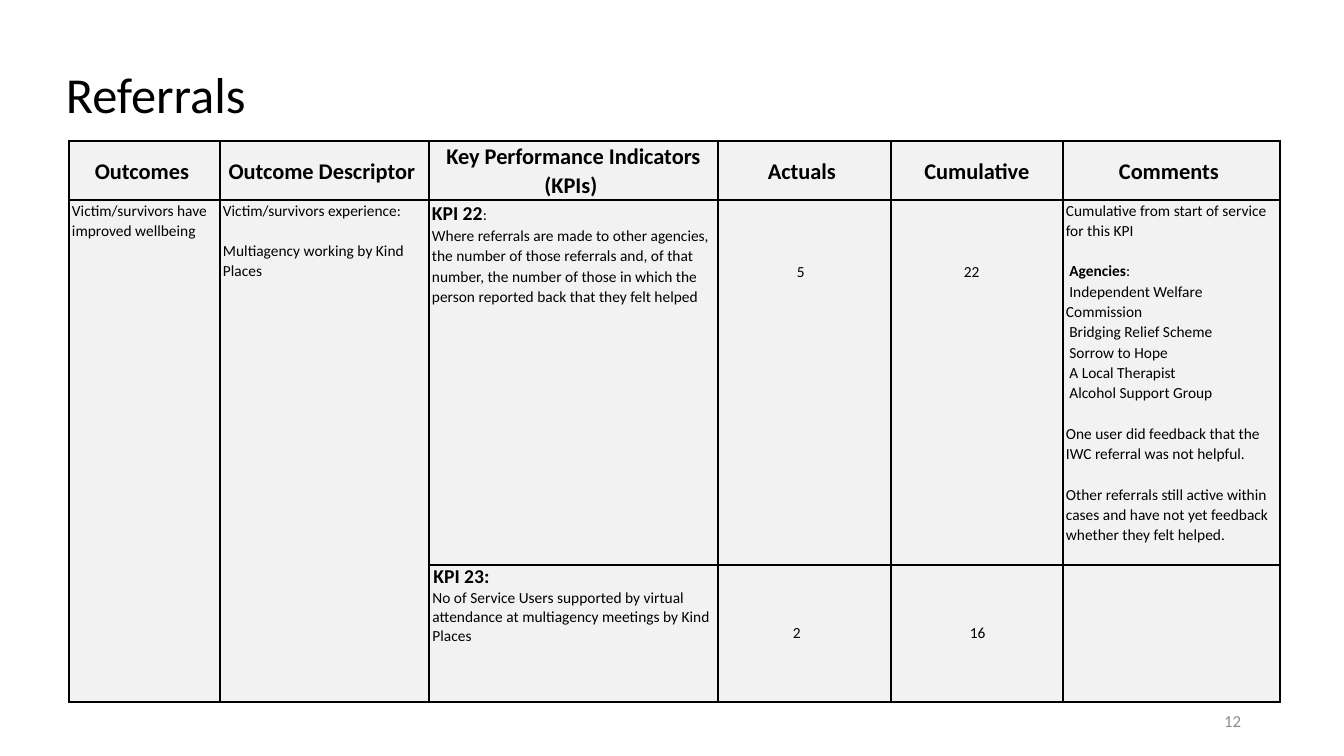
from dataclasses import dataclass

from lxml.etree import SubElement
from pptx import Presentation
from pptx.dml.color import RGBColor as Rgb
from pptx.enum.text import MSO_ANCHOR as Anchor, PP_ALIGN as Align
from pptx.oxml.ns import qn
from pptx.util import Emu, Pt

EMU_PER_PX = 914400 / 100.8
FONT = "Calibri"
COLORS = {"ink": "000000", "cell": "F2F2F2", "number": "8C8C8C", "border": "000000"}
BODY, KPI, HEADING = 11, 14, 16
BLANK_LINE = 14.4
COLUMN_EDGES = [69, 220, 429, 718, 891, 1063, 1280]
ROW_EDGES = [141, 200, 565, 702]


@dataclass(frozen=True)
class Span:
    text: str
    size: int = BODY
    bold: bool = False
    color: str = "ink"


@dataclass(frozen=True)
class Para:
    spans: tuple[Span, ...]
    before: float = 0
    spacing: float = 1.07
    align: Align = Align.LEFT


@dataclass(frozen=True)
class CellText:
    row: int
    column: int
    paras: tuple[Para, ...]
    left: int = 3
    right: int = 3
    top: int = 0
    anchor: Anchor = Anchor.TOP


def px(length: int) -> Emu:
    return Emu(round(length * EMU_PER_PX))


def body(text: str, before: float = 0, spacing: float = 1.07) -> Para:
    return Para((Span(text),), before, spacing)


def heading(column: int, text: str) -> CellText:
    para = Para((Span(text, HEADING, True),), align=Align.CENTER)
    return CellText(0, column, (para,), 7, 7, anchor=Anchor.MIDDLE)


HEADINGS = ["Outcomes ", "Outcome Descriptor ", "Key Performance Indicators (KPIs) ",
            "Actuals ", "Cumulative", "Comments "]
AGENCIES = ["Independent Welfare Commission", "Bridging Relief Scheme", "Sorrow to Hope",
            "A Local Therapist", "Alcohol Support Group"]

CELL_TEXTS = [
    *(heading(column, text) for column, text in enumerate(HEADINGS)),
    CellText(1, 0, (body("Victim/survivors have improved wellbeing"),)),
    CellText(1, 1, (
        body("Victim/survivors experience:"),
        body("Multiagency working by Kind Places", BLANK_LINE),
    )),
    CellText(1, 2, (
        Para((Span("KPI 22", KPI, True), Span(":"))),
        body("Where referrals are made to other agencies, the number of those referrals and, "
             "of that number, the number of those in which the person reported back that "
             "they felt helped"),
    )),
    CellText(1, 3, (body("5"),), left=79, top=61),
    CellText(1, 4, (body("22"),), left=73, top=61),
    CellText(1, 5, (
        body("Cumulative from start of service for this KPI"),
        Para((Span(" "), Span("Agencies", bold=True), Span(":")), BLANK_LINE),
        *(body(f" {agency}") for agency in AGENCIES),
        body("One user did feedback that the IWC referral was not helpful.", BLANK_LINE),
        body("Other referrals still active within cases and have not yet feedback "
             "whether they felt helped.", BLANK_LINE),
    )),
    CellText(2, 2, (
        Para((Span(" KPI 23:", KPI, True),), spacing=1),
        body(" No of Service Users supported by virtual", spacing=1),
        body(" attendance at multiagency meetings by Kind", spacing=1),
        body(" Places", spacing=1),
    ), left=0, right=0),
    CellText(2, 3, (body("2", spacing=1),), left=75, anchor=Anchor.MIDDLE),
    CellText(2, 4, (body("16", spacing=1),), left=79, anchor=Anchor.MIDDLE),
]


def write_paras(frame, paras: tuple[Para, ...]) -> None:
    frame.word_wrap = True
    for index, para in enumerate(paras):
        paragraph = frame.add_paragraph() if index else frame.paragraphs[0]
        paragraph.alignment = para.align
        paragraph.line_spacing = para.spacing
        paragraph.space_before = Pt(para.before)
        for span in para.spans:
            run = paragraph.add_run()
            run.text = span.text
            run.font.name = FONT
            run.font.size = Pt(span.size)
            run.font.bold = span.bold
            run.font.color.rgb = Rgb.from_string(COLORS[span.color])


def add_text(page, left: int, top: int, width: int, height: int, para: Para) -> None:
    box = page.shapes.add_textbox(px(left), px(top), px(width), px(height))
    box.text_frame.vertical_anchor = Anchor.MIDDLE
    write_paras(box.text_frame, (para,))


def style_cell(cell) -> None:
    """Give the cell a black border on each side and the grey fill."""
    properties = cell._tc.get_or_add_tcPr()
    for side in ("lnL", "lnR", "lnT", "lnB"):
        line = SubElement(properties, qn(f"a:{side}"), w=str(Pt(1)))
        SubElement(SubElement(line, qn("a:solidFill")), qn("a:srgbClr"), val=COLORS["border"])
    cell.fill.solid()
    cell.fill.fore_color.rgb = Rgb.from_string(COLORS["cell"])


def add_kpi_table(page) -> None:
    left, right = COLUMN_EDGES[0], COLUMN_EDGES[-1]
    top, bottom = ROW_EDGES[0], ROW_EDGES[-1]
    table = page.shapes.add_table(len(ROW_EDGES) - 1, len(COLUMN_EDGES) - 1, px(left), px(top),
                                  px(right - left), px(bottom - top)).table
    table.first_row = table.horz_banding = False
    for column, start, end in zip(table.columns, COLUMN_EDGES, COLUMN_EDGES[1:]):
        column.width = px(end - start)
    for row, start, end in zip(table.rows, ROW_EDGES, ROW_EDGES[1:]):
        row.height = px(end - start)
    for cell in table.iter_cells():
        style_cell(cell)
    for column in (0, 1):
        table.cell(1, column).merge(table.cell(2, column))
    for item in CELL_TEXTS:
        cell = table.cell(item.row, item.column)
        cell.margin_left, cell.margin_right = px(item.left), px(item.right)
        cell.margin_top, cell.margin_bottom = px(item.top), 0
        cell.vertical_anchor = item.anchor
        write_paras(cell.text_frame, item.paras)


def main() -> None:
    deck = Presentation()
    deck.slide_width, deck.slide_height = px(1344), px(756)
    page = deck.slides.add_slide(deck.slide_layouts[6])
    add_kpi_table(page)
    add_text(page, 56, 60, 621, 74, Para((Span("Referrals", 36),), spacing=0.9))
    add_text(page, 949, 701, 302, 40,
             Para((Span("12", 12, color="number"),), spacing=1, align=Align.RIGHT))
    deck.save("out.pptx")


if __name__ == "__main__":
    main()
